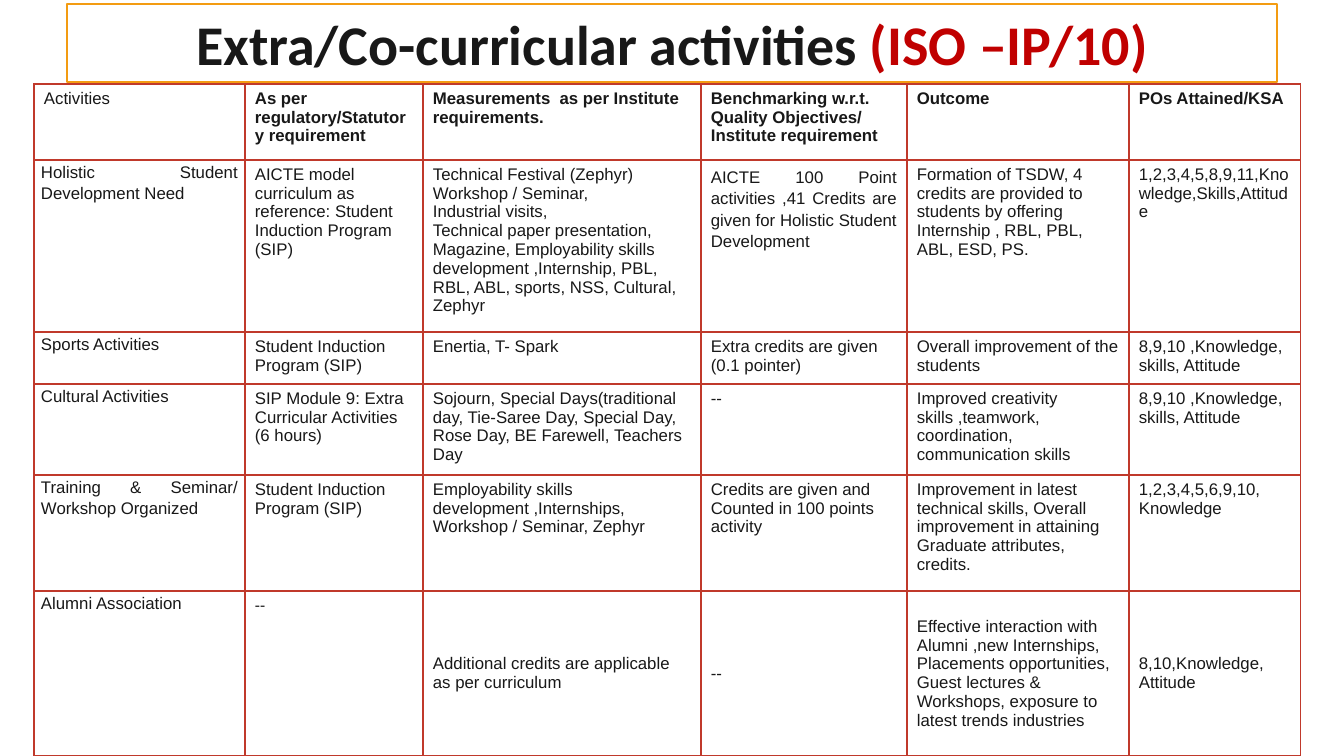
"""Build the extra/co-curricular activities slide: a framed title over a six-column table."""
from dataclasses import dataclass

from lxml import etree
from pptx import Presentation
from pptx import util as u
from pptx.dml.color import RGBColor
from pptx.enum import text
from pptx.oxml import ns

TITLE = ("Extra/Co-curricular activities ", "(ISO –IP/10)")
HEADINGS = (
    "Activities",
    "As per regulatory/Statutory requirement",
    "Measurements  as per Institute requirements.",
    "Benchmarking w.r.t. Quality Objectives/ Institute requirement",
    "Outcome",
    "POs Attained/KSA",
)
ACTIVITIES = [
    (
        "Holistic Student Development Need",
        "AICTE model curriculum as reference: Student Induction Program (SIP)",
        "Technical Festival (Zephyr)\nWorkshop / Seminar,\nIndustrial visits,\n"
        "Technical paper presentation,\nMagazine, Employability skills development ,"
        "Internship, PBL, RBL, ABL, sports, NSS, Cultural, Zephyr",
        "AICTE 100 Point activities ,41 Credits are given for Holistic Student Development",
        "Formation of TSDW, 4 credits are provided to students by offering "
        "Internship , RBL, PBL, ABL, ESD, PS.",
        "1,2,3,4,5,8,9,11,Knowledge,Skills,Attitude",
    ),
    (
        "Sports Activities",
        "Student Induction Program (SIP)",
        "Enertia, T- Spark",
        "Extra credits are given (0.1 pointer)",
        "Overall improvement of the students",
        "8,9,10 ,Knowledge, skills, Attitude",
    ),
    (
        "Cultural Activities",
        "SIP Module 9: Extra Curricular Activities (6 hours)",
        "Sojourn, Special Days(traditional day, Tie-Saree Day, Special Day, "
        "Rose Day, BE Farewell, Teachers Day",
        "--",
        "Improved creativity skills ,teamwork, coordination, communication skills",
        "8,9,10 ,Knowledge, skills, Attitude",
    ),
    (
        "Training & Seminar/ Workshop Organized",
        "Student Induction Program (SIP)",
        "Employability skills development ,Internships, Workshop / Seminar, Zephyr",
        "Credits are given and Counted in 100 points activity",
        "Improvement in latest technical skills, Overall improvement in attaining "
        "Graduate attributes, credits.",
        "1,2,3,4,5,6,9,10, Knowledge",
    ),
    (
        "Alumni Association",
        "--",
        "Additional credits are applicable as per curriculum",
        "--",
        "Effective interaction with Alumni ,new Internships, Placements opportunities, "
        "Guest lectures & Workshops, exposure to latest trends industries",
        "8,10,Knowledge, Attitude",
    ),
]
ROWS = [HEADINGS, *ACTIVITIES]
COLUMN_WIDTHS = (211, 178, 278, 206, 222, 172)
ROW_HEIGHTS = (76, 172, 52, 91, 116, 165)
JUSTIFIED = {(row, 0) for row in range(1, len(ROWS))} | {(1, 3)}


@dataclass(frozen=True)
class Theme:
    ink: str = "181818"
    accent: str = "C00000"
    paper: str = "FFFFFF"
    frame: str = "F39C12"
    rule: str = "C0392B"
    title_font: str = "Calibri"
    body_font: str = "Arial"
    title_size: int = 40
    body_size: int = 12


THEME = Theme()
SLIDE_WIDTH, SLIDE_HEIGHT = 1344, 756
SCALE = u.Inches(13.3333) / SLIDE_WIDTH


def px(length):
    return u.Emu(round(length * SCALE))


def colour(value):
    return RGBColor.from_string(value)


def set_font(font, name, size, bold, ink):
    font.name, font.size, font.bold = name, u.Pt(size), bold
    font.color.rgb = colour(ink)


def add_title(slide):
    title = slide.shapes.title
    title.left, title.top, title.width, title.height = px(67), px(4), px(1210), px(78)
    title.fill.solid()
    title.fill.fore_color.rgb = colour(THEME.paper)
    title.line.color.rgb = colour(THEME.frame)
    title.line.width = u.Pt(2)
    frame = title.text_frame
    frame.word_wrap = True
    frame.auto_size = text.MSO_AUTO_SIZE.NONE
    frame.vertical_anchor = text.MSO_ANCHOR.MIDDLE
    heading = frame.paragraphs[0]
    heading.alignment = text.PP_ALIGN.CENTER
    for wording, ink in zip(TITLE, (THEME.ink, THEME.accent)):
        part = heading.add_run()
        part.text = wording
        set_font(part.font, THEME.title_font, THEME.title_size, True, ink)


def draw_borders(cell, row):
    weights = {"L": 1, "R": 1, "T": 2 if row == 1 else 1, "B": 2 if row == 0 else 1}
    properties = cell._tc.get_or_add_tcPr()
    for position, (side, weight) in enumerate(weights.items()):
        border = etree.Element(ns.qn(f"a:ln{side}"), w=str(u.Pt(weight)))
        fill = etree.SubElement(border, ns.qn("a:solidFill"))
        etree.SubElement(fill, ns.qn("a:srgbClr"), val=THEME.rule)
        properties.insert(position, border)


def fill_cell(cell, row, column, wording):
    side, end = (7, 0) if row and column == 0 else (10, 5)
    cell.margin_left = cell.margin_right = px(side)
    cell.margin_top = cell.margin_bottom = px(end)
    centred = row == len(ROWS) - 1 and column > 1
    cell.vertical_anchor = text.MSO_ANCHOR.MIDDLE if centred else text.MSO_ANCHOR.TOP
    cell.fill.background()
    draw_borders(cell, row)
    cell.text = wording
    name = THEME.title_font if (row, column) == (len(ROWS) - 1, 1) else THEME.body_font
    for paragraph in cell.text_frame.paragraphs:
        set_font(paragraph.font, name, THEME.body_size, row == 0 and column > 0, THEME.ink)
        if (row, column) in JUSTIFIED:
            paragraph.alignment = text.PP_ALIGN.JUSTIFY
            paragraph.line_spacing = 1.15


def add_activities(slide):
    activities = slide.shapes.add_table(
        len(ROWS), len(HEADINGS), px(34), px(84),
        px(sum(COLUMN_WIDTHS)), px(sum(ROW_HEIGHTS)),
    ).table
    activities.first_row = activities.horz_banding = False
    for column, width in zip(activities.columns, COLUMN_WIDTHS):
        column.width = px(width)
    for row, height in zip(activities.rows, ROW_HEIGHTS):
        row.height = px(height)
    for row, entries in enumerate(ROWS):
        for column, wording in enumerate(entries):
            fill_cell(activities.cell(row, column), row, column, wording)


def main():
    deck = Presentation()
    deck.slide_width, deck.slide_height = px(SLIDE_WIDTH), px(SLIDE_HEIGHT)
    slide = deck.slides.add_slide(deck.slide_layouts[5])
    add_title(slide)
    add_activities(slide)
    deck.save("out.pptx")


if __name__ == "__main__":
    main()
